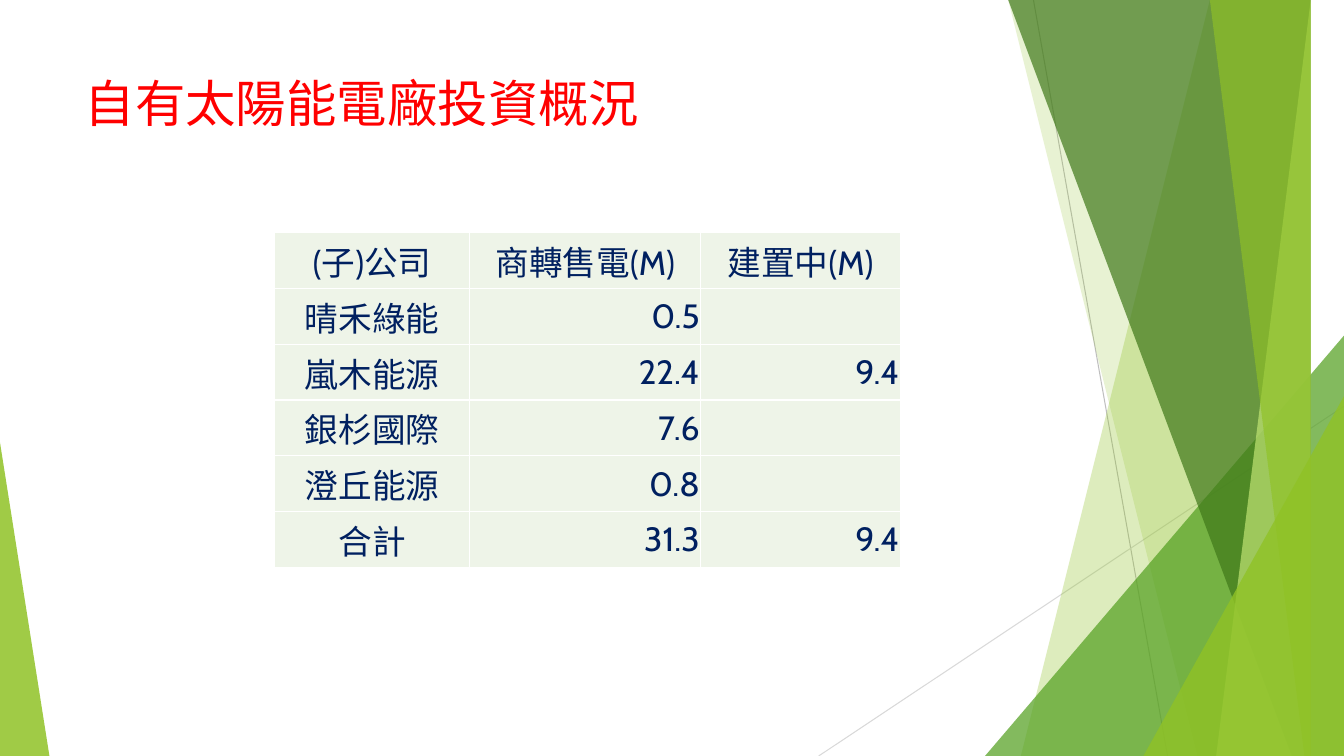
from lxml.etree import SubElement
from pptx import Presentation
from pptx.dml.color import RGBColor
from pptx.enum.shapes import MSO_CONNECTOR, MSO_SHAPE
from pptx.enum.text import MSO_ANCHOR, PP_ALIGN
from pptx.oxml import parse_xml
from pptx.oxml.ns import nsdecls, qn
from pptx.util import Inches, Pt

WIDTH, HEIGHT = 13.33, 7.5
FONT = "Cabin"
RED = RGBColor(0xFF, 0x00, 0x00)
NAVY = RGBColor(0x00, 0x20, 0x60)
PALE_GREEN = RGBColor(0xEE, 0xF4, 0xE8)
LIME = RGBColor(0x90, 0xC2, 0x26)
GREEN = RGBColor(0x54, 0xA0, 0x21)
DARK_GREEN = RGBColor(0x3F, 0x78, 0x19)
LIGHT_LIME = RGBColor(0xC0, 0xE4, 0x74)
GREY = RGBColor(0xBF, 0xBF, 0xBF)
LIGHT_GREY = RGBColor(0xD9, 0xD9, 0xD9)

TITLE = "自有太陽能電廠投資概況"
ROWS = [
    ("(子)公司", "商轉售電(M)", "建置中(M)"),
    ("晴禾綠能", "0.5", ""),
    ("嵐木能源", "22.4", "9.4"),
    ("銀杉國際", "7.6", ""),
    ("澄丘能源", "0.8", ""),
    ("合計", "31.3", "9.4"),
]
COLUMN_WIDTHS = (1.94, 2.29, 1.98)
TABLE_LEFT, TABLE_TOP, ROW_HEIGHT = 2.72, 2.31, 0.553

# Start, end, colour
LINES = [
    ((10.25, 0), (11.58, HEIGHT), GREY),
    ((WIDTH, 4.03), (8.12, HEIGHT), LIGHT_GREY),
]
# Bands reach the right edge: top left x, bottom left x, colour, opacity %
# Triangles stand on the bottom edge: left, width, height, apex, colour, opacity %
DECORATION = [
    ("band", 12.28, 10.04, LIME, 30),
    ("band", 10.5, 11.83, LIME, 20),
    ("triangle", 9.77, 3.56, 4.17, 1, GREEN, 72),
    ("band", 10.21, 12.91, DARK_GREEN, 70),
    ("band", 13.03, 11.92, LIGHT_LIME, 70),
    ("band", 11.96, 13.18, LIME, 65),
    ("triangle", 11.34, 1.99, 3.57, 1, LIME, 80),
    ("triangle", 0, 0.49, 3.11, 0, LIME, 85),
]


def format_font(font, size, color):
    for name, value in {"name": FONT, "size": Pt(size), "bold": False}.items():
        setattr(font, name, value)
    font.color.rgb = color


def paint(shape, color, opacity):
    shape.shadow.inherit = False
    shape.fill.solid()
    shape.fill.fore_color.rgb = color
    shape.line.fill.background()
    color_element = next(shape._element.spPr.iter(qn("a:srgbClr")))
    SubElement(color_element, qn("a:alpha"), val=str(opacity * 1000))


def add_line(slide, start, end, color):
    points = [Inches(value) for value in (*start, *end)]
    line = slide.shapes.add_connector(MSO_CONNECTOR.STRAIGHT, *points)
    line.line.color.rgb = color
    line.line.width = Pt(0.75)
    SubElement(line._element.spPr, qn("a:effectLst"))


def add_band(slide, top_left, bottom_left, color, opacity):
    builder = slide.shapes.build_freeform(top_left, 0, scale=Inches(1))
    builder.add_line_segments([(WIDTH, 0), (WIDTH, HEIGHT), (bottom_left, HEIGHT)])
    paint(builder.convert_to_shape(), color, opacity)


def add_triangle(slide, left, width, height, apex, color, opacity):
    box = [Inches(value) for value in (left, HEIGHT - height, width, height)]
    triangle = slide.shapes.add_shape(MSO_SHAPE.ISOSCELES_TRIANGLE, *box)
    triangle.adjustments[0] = apex
    paint(triangle, color, opacity)


def add_borders(cell):
    properties = cell._tc.get_or_add_tcPr()
    for index, side in enumerate(("lnL", "lnR", "lnT", "lnB")):
        properties.insert(index, parse_xml(
            f'<a:{side} {nsdecls("a")} w="12700"><a:solidFill>'
            f'<a:srgbClr val="FFFFFF"/></a:solidFill></a:{side}>'))


def fill_cell(cell, text, alignment):
    cell_format = {
        "vertical_anchor": MSO_ANCHOR.MIDDLE,
        "margin_left": Inches(0.01),
        "margin_right": Inches(0.01),
        "margin_top": Inches(0.01),
        "margin_bottom": 0,
    }
    for name, value in cell_format.items():
        setattr(cell, name, value)
    cell.fill.solid()
    cell.fill.fore_color.rgb = PALE_GREEN
    add_borders(cell)
    if text:
        paragraph = cell.text_frame.paragraphs[0]
        paragraph.alignment = alignment
        run = paragraph.add_run()
        run.text = text
        format_font(run.font, 24, NAVY)


def add_investment_table(slide):
    box = (TABLE_LEFT, TABLE_TOP, sum(COLUMN_WIDTHS), ROW_HEIGHT * len(ROWS))
    table = slide.shapes.add_table(
        len(ROWS), len(COLUMN_WIDTHS), *[Inches(value) for value in box]).table
    table.first_row = table.horz_banding = False
    for column, width in zip(table.columns, COLUMN_WIDTHS):
        column.width = Inches(width)
    for row_index, row in enumerate(ROWS):
        for column_index, text in enumerate(row):
            is_number = row_index > 0 and column_index > 0
            alignment = PP_ALIGN.RIGHT if is_number else PP_ALIGN.CENTER
            fill_cell(table.cell(row_index, column_index), text, alignment)


def format_title(title):
    box = {"left": 0.74, "top": 0.67, "width": 9.4, "height": 1.44}
    for name, value in box.items():
        setattr(title, name, Inches(value))
    title.text_frame.text = TITLE
    title.text_frame.vertical_anchor = MSO_ANCHOR.TOP
    paragraph = title.text_frame.paragraphs[0]
    paragraph.alignment = PP_ALIGN.LEFT
    format_font(paragraph.runs[0].font, 36, RED)


def main():
    presentation = Presentation()
    presentation.slide_width = Inches(WIDTH)
    presentation.slide_height = Inches(HEIGHT)
    slide = presentation.slides.add_slide(presentation.slide_layouts[5])
    for line in LINES:
        add_line(slide, *line)
    builders = {"band": add_band, "triangle": add_triangle}
    for kind, *values in DECORATION:
        builders[kind](slide, *values)
    format_title(slide.shapes.title)
    add_investment_table(slide)
    presentation.save("out.pptx")


if __name__ == "__main__":
    main()
